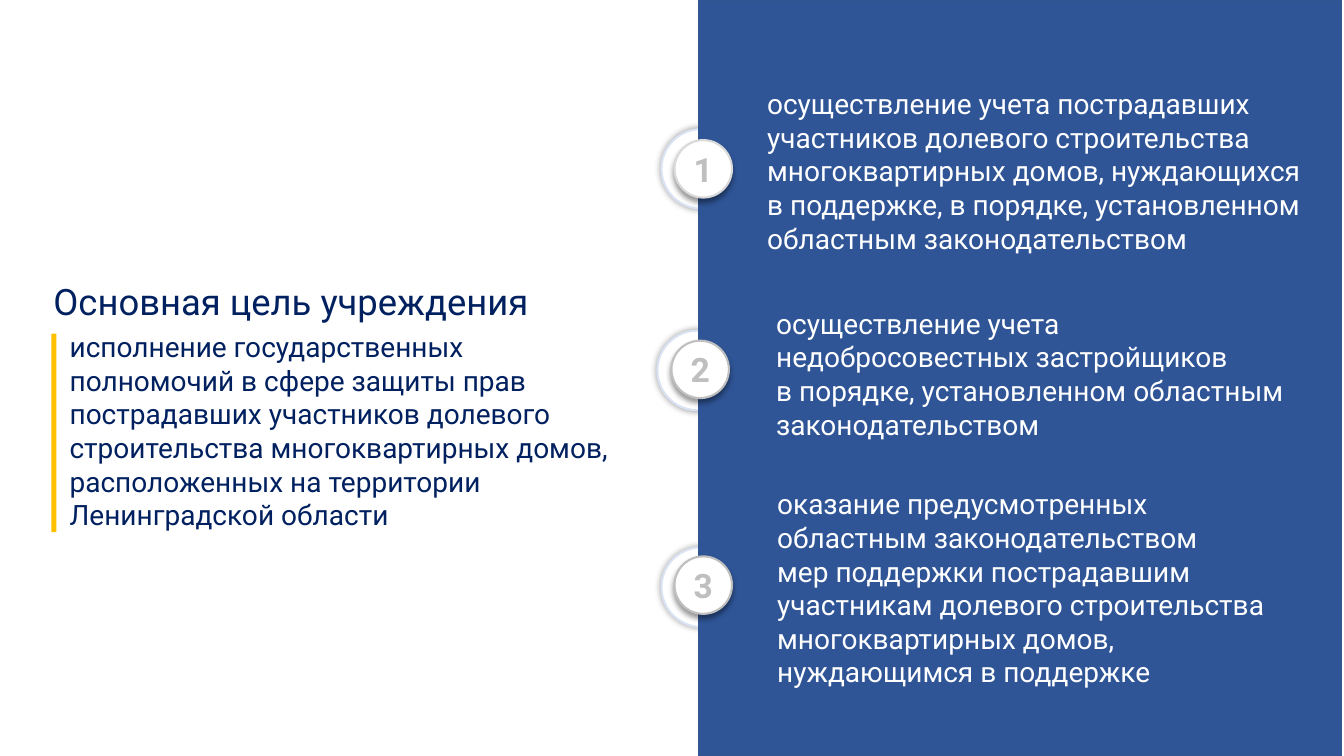
"""Build a slide on the main goal of an institution and its three tasks."""
from lxml.etree import SubElement
from pptx import Presentation
from pptx.dml.color import RGBColor as Color
from pptx.enum.shapes import MSO_SHAPE as Shape
from pptx.enum.text import MSO_ANCHOR as Anchor, MSO_AUTO_SIZE as Auto, PP_ALIGN as Align
from pptx.oxml.ns import qn
from pptx.util import Inches, Pt

HUES = {"white": "FFFFFF", "navy": "002060", "blue": "2F5597", "edge": "325491",
        "gold": "FFC000", "ring": "DAE3F3", "pale": "D9D9D9", "gray": "BFBFBF", "black": "000000"}


def draw(kind, box, fill, line=None, width=1.5, blur=0, dist=0):
    shape = slide.shapes.add_shape(kind, *map(Inches, box))
    shape.shadow.inherit = False
    shape.fill.solid()
    shape.fill.fore_color.rgb = Color.from_string(HUES[fill])
    if line:
        shape.line.color.rgb = Color.from_string(HUES[line])
        shape.line.width = Pt(width)
    else:
        shape.line.fill.background()
    if blur:
        effects = shape.element.spPr.find(qn("a:effectLst"))
        shade = SubElement(effects, qn("a:outerShdw"), blurRad=str(Pt(blur)), dist=str(Pt(dist)),
                           dir="5400000" if dist else "0", algn="ctr", rotWithShape="0")
        tint = SubElement(shade, qn("a:srgbClr"), val=HUES["black"])
        SubElement(tint, qn("a:alpha"), val="40000")
    return shape


def write(shape, text, size, hue, bold=False, align=Align.LEFT, anchor=Anchor.TOP):
    frame = shape.text_frame
    frame.text = text
    frame.word_wrap = True
    frame.vertical_anchor = anchor
    for para in frame.paragraphs:
        para.alignment = align
        para.space_before = Pt(0)
        for run in para.runs:
            run.font.name = "Roboto"
            run.font.size = Pt(size)
            run.font.bold = bold
            run.font.color.rgb = Color.from_string(HUES[hue])
    return frame


deck = Presentation()
deck.slide_width, deck.slide_height = Inches(13.33), Inches(7.5)
slide = deck.slides.add_slide(deck.slide_layouts[1])

title, goal = slide.placeholders
for shape, box in ((title, (-0.75, 2.65, 6.79, 0.57)), (goal, (0.59, 3.22, 5.7, 2.12))):
    shape.left, shape.top, shape.width, shape.height = map(Inches, box)

frame = write(title, "Основная цель учреждения", 26, "navy", align=Align.CENTER)
frame.auto_size = Auto.SHAPE_TO_FIT_TEXT
head = frame.paragraphs[0]
head.line_spacing = 1.15
head.space_after = Pt(8)
head._p.get_or_add_pPr().set("indent", str(Inches(0.49)))

frame = write(goal, "исполнение государственных полномочий в сфере защиты прав пострадавших "
              "участников долевого строительства многоквартирных домов, расположенных "
              "на территории Ленинградской области", 20, "navy")
frame.auto_size = Auto.SHAPE_TO_FIT_TEXT
props = frame.paragraphs[0]._p.get_or_add_pPr()
props.set("marL", "0")
props.set("indent", "0")
SubElement(props, qn("a:buNone"))
draw(Shape.RECTANGLE, (0.51, 3.31, 0.05, 1.97), "gold")

tasks = [
    ((7.51, 0.81, 5.98, 1.78), (6.56, 1.28), (6.69, 1.39), "pale",
     "осуществление учета пострадавших участников долевого строительства "
     "многоквартирных домов, нуждающихся\n"
     "в поддержке, в порядке, установленном областным законодательством"),
    ((7.6, 2.99, 5.4, 1.45), (6.52, 3.28), (6.66, 3.38), "gray",
     "осуществление учета недобросовестных застройщиков\n"
     "в порядке, установленном областным законодательством"),
    ((7.61, 4.78, 5.03, 2.12), (6.56, 5.43), (6.69, 5.52), "gray",
     "оказание предусмотренных областным законодательством\n"
     "мер поддержки пострадавшим участникам долевого строительства "
     "многоквартирных домов, нуждающимся в поддержке"),
]

for _, ring, _, _, _ in tasks:
    draw(Shape.OVAL, (*ring, 0.79, 0.79), "white", "ring", blur=5)
draw(Shape.RECTANGLE, (6.93, 0, 6.37, 7.5), "blue", "edge", 1)

for num, (box, _, spot, line, text) in enumerate(tasks, 1):
    note = slide.shapes.add_textbox(*map(Inches, box))
    write(note, text, 20, "white").auto_size = Auto.SHAPE_TO_FIT_TEXT
    disc = draw(Shape.OVAL, (*spot, 0.57, 0.57), "white", line, blur=4, dist=3)
    write(disc, str(num), 24, "gray", True, Align.CENTER, Anchor.MIDDLE)

deck.save("out.pptx")
